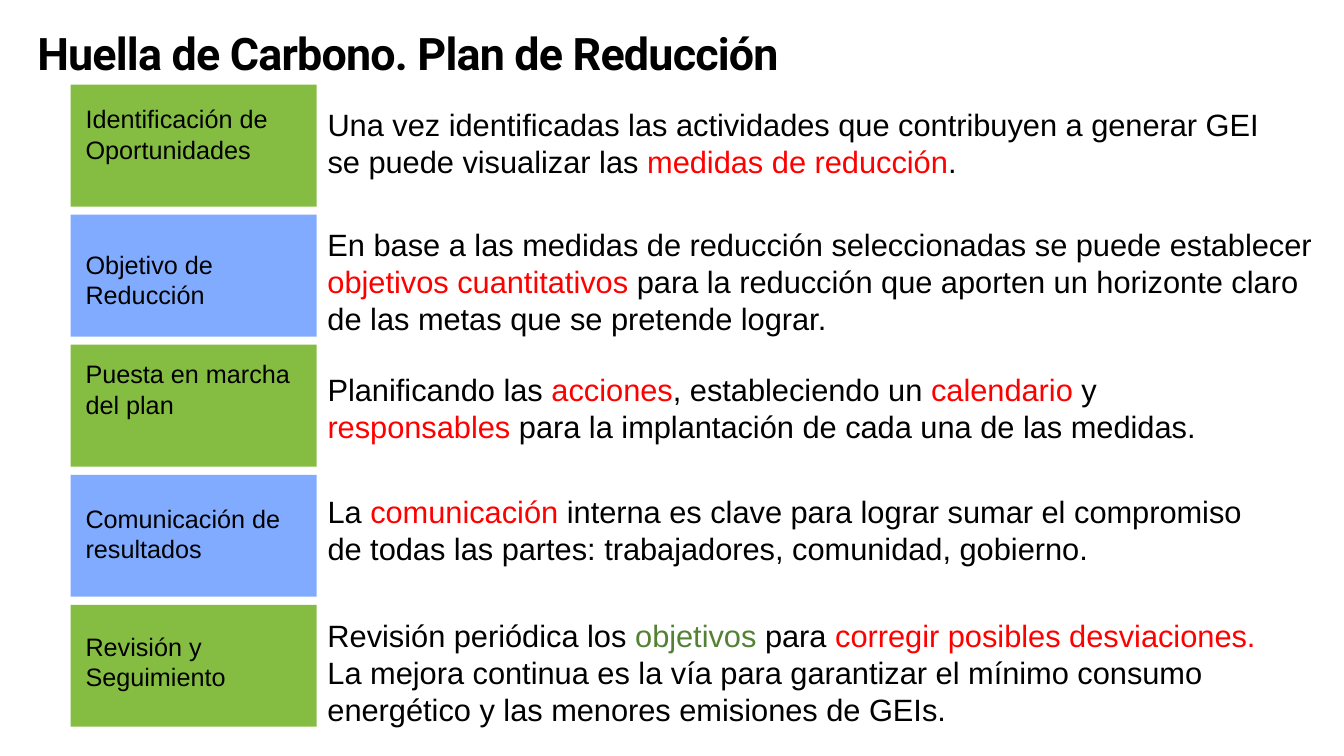
import pptx
import pptx.util
import pptx.dml.color
import pptx.enum.text
import pptx.oxml
import pptx.oxml.ns
import pptx.enum.shapes

# Content: boxes are (left, top, width, height) in px, 100 px to the inch
HEADING = "Huella de Carbono. Plan de Reducción"
HEADING_BOX = (27, 26, 778, 59)
BLACK, RED, GREEN = "000000", "FF0000", "548235"

# Each stage: label paragraphs, label box, description paragraphs, description box
STAGES = [
    (["Identificación de Oportunidades"], (75, 98, 215, 101),
     [[("Una vez identificadas las actividades que contribuyen a generar GEI "
        "se puede visualizar las ", BLACK),
       ("medidas de reducción", RED), (".", BLACK)]],
     (315, 100, 962, 84)),
    (["Objetivo de", "Reducción"], (75, 242, 172, 71),
     [[("En base a las medidas de reducción seleccionadas se puede establecer ", BLACK),
       ("objetivos cuantitativos ", RED),
       ("para la reducción que aporten un horizonte claro de las metas "
        "que se pretende lograr.", BLACK)]],
     (315, 219, 1003, 121)),
    (["Puesta en marcha", "del plan"], (75, 351, 234, 101),
     [[("Planificando las ", BLACK), ("acciones", RED),
       (", estableciendo un ", BLACK), ("calendario", RED), (" y ", BLACK),
       ("responsables", RED),
       (" para la implantación de cada una de las medidas.", BLACK)]],
     (315, 363, 939, 84)),
    (["Comunicación de resultados"], (75, 494, 231, 71),
     [[("La ", BLACK), ("comunicación", RED),
       (" interna es clave para lograr sumar el compromiso de todas las partes: "
        "trabajadores, comunidad, gobierno.", BLACK)]],
     (315, 484, 962, 84)),
    (["Revisión y Seguimiento"], (75, 621, 214, 71),
     [[("Revisión periódica los", BLACK), (" objetivos ", GREEN), ("para ", BLACK),
       ("corregir posibles desviaciones.", RED)],
      [("La mejora continua es la vía para garantizar el mínimo consumo energético "
        "y las menores emisiones de GEIs.", BLACK)]],
     (315, 607, 1003, 121)),
]

BLOCK_LEFT, BLOCK_TOP, BLOCK_WIDTH, BLOCK_HEIGHT, BLOCK_STEP = 70, 84, 244, 121, 129
BLOCK_COLOURS = ("5BA601", "568FFF")
BLOCK_ALPHA = 74

HEADING_FONT = {"name": "Roboto", "size": pptx.util.Pt(32), "bold": True}
LABEL_FONT = {"name": "Arial", "size": pptx.util.Pt(18)}
DESCRIPTION_FONT = {"name": "Arial", "size": pptx.util.Pt(22)}
HEADING_FRAME = {"word_wrap": True,
                 "auto_size": pptx.enum.text.MSO_AUTO_SIZE.NONE,
                 "vertical_anchor": pptx.enum.text.MSO_ANCHOR.MIDDLE}
HEADING_PARAGRAPH = {"alignment": pptx.enum.text.PP_ALIGN.LEFT, "line_spacing": 0.9}


def px(*lengths):
    return [pptx.util.Emu(length * 9144) for length in lengths]


def paint(colour_format, colour):
    colour_format.rgb = pptx.dml.color.RGBColor.from_string(colour)


def apply(target, values):
    for name, value in values.items():
        setattr(target, name, value)


def add_run(paragraph, text, colour, font):
    run = paragraph.add_run()
    run.text = text
    apply(run.font, font)
    paint(run.font.color, colour)
    return run


def add_text(slide, box, paragraphs, font):
    frame = slide.shapes.add_textbox(*px(*box)).text_frame
    frame.word_wrap = True
    for index, runs in enumerate(paragraphs):
        paragraph = frame.add_paragraph() if index else frame.paragraphs[0]
        for text, colour in runs:
            add_run(paragraph, text, colour, font)


def add_block(slide, row):
    block = slide.shapes.add_shape(
        pptx.enum.shapes.MSO_SHAPE.RECTANGLE,
        *px(BLOCK_LEFT, BLOCK_TOP + row * BLOCK_STEP, BLOCK_WIDTH, BLOCK_HEIGHT))
    block.shadow.inherit = False
    block.line.fill.background()
    block.fill.solid()
    paint(block.fill.fore_color, BLOCK_COLOURS[row % 2])
    # Transparency
    tint = block.fill._xPr.find(".//" + pptx.oxml.ns.qn("a:srgbClr"))
    alpha = pptx.oxml.parse_xml(
        f'<a:alpha {pptx.oxml.ns.nsdecls("a")} val="{BLOCK_ALPHA * 1000}"/>')
    tint.append(alpha)


def main():
    deck = pptx.Presentation()
    deck.slide_width, deck.slide_height = px(1333, 750)
    slide = deck.slides.add_slide(deck.slide_layouts[5])

    # Heading
    heading = slide.shapes.title
    apply(heading, dict(zip(("left", "top", "width", "height"), px(*HEADING_BOX))))
    apply(heading.text_frame, HEADING_FRAME)
    heading_line = heading.text_frame.paragraphs[0]
    apply(heading_line, HEADING_PARAGRAPH)
    heading_run = add_run(heading_line, HEADING, BLACK, HEADING_FONT)
    heading_run.font._element.set("spc", "-60")

    # Stages: coloured block, label and description
    for row, (label, label_box, description, description_box) in enumerate(STAGES):
        add_block(slide, row)
        add_text(slide, label_box, [[(line, BLACK)] for line in label], LABEL_FONT)
        add_text(slide, description_box, description, DESCRIPTION_FONT)

    deck.save("out.pptx")


if __name__ == "__main__":
    main()
